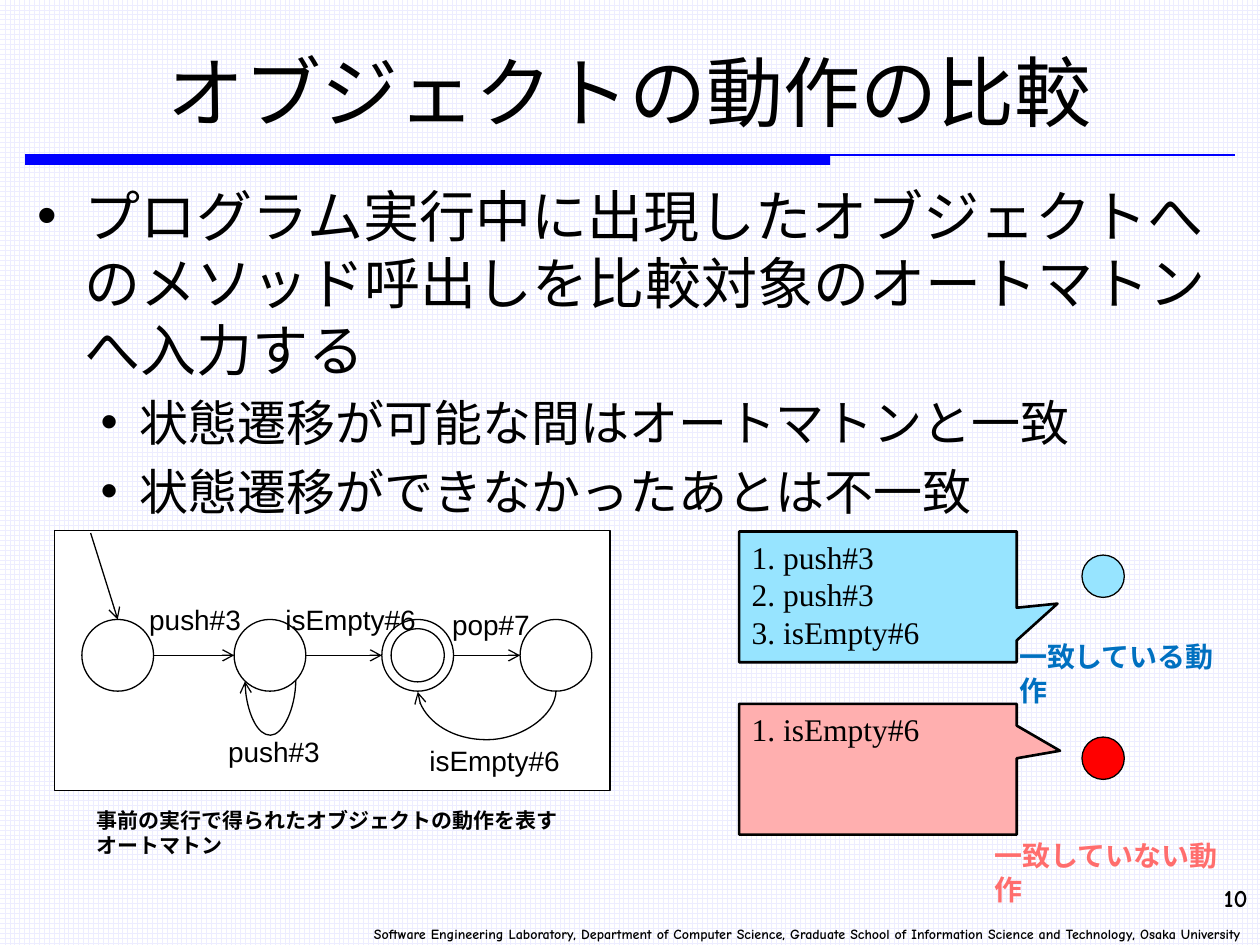
from pptx import Presentation
from pptx.dml.color import RGBColor
from pptx.enum.dml import MSO_PATTERN
from pptx.enum.shapes import MSO_CONNECTOR, MSO_SHAPE
from pptx.enum.text import MSO_ANCHOR, PP_ALIGN
from pptx.oxml.ns import qn
from pptx.util import Pt
from lxml import etree

GRID = MSO_PATTERN.LARGE_GRID
LINE, CURVE = MSO_CONNECTOR.STRAIGHT, MSO_CONNECTOR.CURVE
RECT, OVAL, CALL = MSO_SHAPE.RECTANGLE, MSO_SHAPE.OVAL, MSO_SHAPE.RECTANGULAR_CALLOUT
TOP, MID = MSO_ANCHOR.TOP, MSO_ANCHOR.MIDDLE
LEFT, RIGHT, CENTER = PP_ALIGN.LEFT, PP_ALIGN.RIGHT, PP_ALIGN.CENTER
BLACK, BLUE, SKY = "000000", "0000FF", "97E4FF"
STATE = 41
STATE_Y = 354
STATES = (46.8, 133.8, 218.2, 297.2)


def color(code):
    return RGBColor.from_string(code)


def write(para, text, size, font="Arial", ink=BLACK, bold=False):
    run = para.add_run()
    run.text = text
    run.font.size = Pt(size)
    run.font.name = font
    run.font.bold = bold
    run.font.color.rgb = color(ink)


def label(slide, box, text, size, wrap=False, align=LEFT, anchor=TOP, **style):
    frame = slide.shapes.add_textbox(*map(Pt, box)).text_frame
    frame.word_wrap = wrap
    frame.vertical_anchor = anchor
    para = frame.paragraphs[0]
    para.alignment = align
    write(para, text, size, **style)


def bullets(slide, box, items):
    """Lay out (text, size, margin, hang) items as a bulleted list."""
    frame = slide.shapes.add_textbox(*map(Pt, box)).text_frame
    frame.word_wrap = True
    for i, (text, size, margin, hang) in enumerate(items):
        para = frame.add_paragraph() if i else frame.paragraphs[0]
        props = para._p.get_or_add_pPr()
        props.set("marL", str(Pt(margin)))
        props.set("indent", str(-Pt(hang)))
        etree.SubElement(props, qn("a:buFont")).set("typeface", "Arial")
        etree.SubElement(props, qn("a:buChar")).set("char", "•")
        if i:
            para.space_before = Pt(size * 0.2)
        write(para, text, size)


def shape(slide, kind, box, fill=None, ink=BLACK, width=0.75):
    item = slide.shapes.add_shape(kind, *map(Pt, box))
    item.shadow.inherit = False
    if fill:
        item.fill.solid()
        item.fill.fore_color.rgb = color(fill)
    else:
        item.fill.background()
    if ink:
        item.line.color.rgb = color(ink)
        item.line.width = Pt(width)
    else:
        item.line.fill.background()
    return item


def callout(slide, box, fill, tip, steps):
    item = shape(slide, CALL, box, fill, width=1.5)
    item.adjustments[0], item.adjustments[1] = tip
    frame = item.text_frame
    frame.vertical_anchor = TOP
    for i, step in enumerate(steps):
        para = frame.add_paragraph() if i else frame.paragraphs[0]
        para.alignment = LEFT
        write(para, f"{i + 1}. {step}", 18, "Times New Roman")


def link(slide, start, end, ink=BLACK, kind=LINE, head=True):
    item = slide.shapes.add_connector(kind, *map(Pt, start + end))
    item.line.color.rgb = color(ink)
    item.line.width = Pt(0.75)
    if head:
        etree.SubElement(item.line._get_or_add_ln(), qn("a:tailEnd")).set("type", "arrow")
    etree.SubElement(item._element.spPr, qn("a:effectLst"))
    return item


def loop(slide, right, left, y, dip):
    """Draw a U-shaped arrow from right to left: a thin curve turned by 90 degrees."""
    thin, span = 0.72, right - left
    x, top = (right + left - thin) / 2, y - span / 2
    item = link(slide, (x, top), (x + thin, top + span), kind=CURVE)
    props = item._element.spPr
    props.find(qn("a:xfrm")).set("rot", "5400000")
    geom = props.find(qn("a:prstGeom"))
    guides = geom.find(qn("a:avLst"))
    if guides is None:
        guides = etree.SubElement(geom, qn("a:avLst"))
    guide = etree.SubElement(guides, qn("a:gd"))
    guide.set("name", "adj1")
    guide.set("fmla", f"val {round(dip / thin * 100000)}")


def frame(slide):
    fill = slide.background.fill
    fill.patterned()
    fill.pattern = GRID
    fill.fore_color.rgb = color("EDEDFF")
    fill.back_color.rgb = color("FFFFFF")
    shape(slide, RECT, (14.4, 88.5, 460, 5.8), BLUE, None)
    link(slide, (14.4, 88.5), (705.6, 88.5), BLUE, head=False)
    label(slide, (683.3, 501, 36.7, 20), "10", 14, align=RIGHT,
          font="Comic Neue", bold=True)
    label(slide, (136, 525.6, 581, 16.6),
          "Software Engineering Laboratory, Department of Computer Science, "
          "Graduate School of Information Science and Technology, Osaka University",
          8, align=RIGHT, font="Comic Neue", bold=True)


def machine(slide):
    shape(slide, RECT, (31, 303.3, 317.5, 148.3), "FFFFFF")
    for x in STATES:
        shape(slide, OVAL, (x, STATE_Y, STATE, STATE))
    shape(slide, OVAL, (STATES[2] + 5.3, STATE_Y + 5.3, 30.4, 30.4))
    mid = STATE_Y + STATE / 2
    link(slide, (51.8, 304.6), (STATES[0] + STATE / 2, STATE_Y))
    for a, b in zip(STATES, STATES[1:]):
        link(slide, (a + STATE, mid), (b, mid))
    loop(slide, 169, 140, 389, 32)
    loop(slide, STATES[3] + STATE / 2, STATES[2] + STATE / 2, STATE_Y + STATE, 28.5)
    for x, y, width, text in (
        (78.2, 340.6, 67.7, "push#3"),
        (156, 340.6, 90, "isEmpty#6"),
        (251.2, 343.8, 59, "pop#7"),
        (123.3, 416.4, 67.7, "push#3"),
        (238.3, 421.4, 90, "isEmpty#6"),
    ):
        label(slide, (x, y, width, 26.6), text, 16)
    label(slide, (48, 458, 297.4, 21.6),
          "事前の実行で得られたオブジェクトの動作を表すオートマトン",
          12, wrap=True, bold=True)


def traces(slide):
    callout(slide, (422.4, 303.7, 158.6, 74.7), SKY, (0.647, 0.052),
            ("push#3", "push#3", "isEmpty#6"))
    callout(slide, (422.4, 402.2, 158.6, 74.7), "FFAFAF", (0.656, -0.141),
            ("isEmpty#6",))
    label(slide, (575.3, 362.2, 129.6, 26.6), "一致している動作", 16,
          wrap=True, ink="0070C0", bold=True)
    label(slide, (561.3, 475.8, 145, 26.6), "一致していない動作", 16,
          wrap=True, ink="FF6D6D", bold=True)
    for y, fill in ((317.2, SKY), (421.2, "FF0000")):
        shape(slide, OVAL, (618.3, y, 24.2, 24.2), fill)


def main():
    deck = Presentation()
    deck.slide_width, deck.slide_height = Pt(720), Pt(540)
    slide = deck.slides.add_slide(deck.slide_layouts[6])
    frame(slide)
    label(slide, (14.4, 15, 691.7, 73.5), "オブジェクトの動作の比較", 44,
          wrap=True, align=CENTER, anchor=MID)
    bullets(slide, (14.4, 100, 691.7, 396.8), (
        ("プログラム実行中に出現したオブジェクトへのメソッド呼出しを比較対象のオートマトンへ入力する",
         32, 27, 27),
        ("状態遷移が可能な間はオートマトンと一致", 28, 58.5, 22.5),
        ("状態遷移ができなかったあとは不一致", 28, 58.5, 22.5),
    ))
    traces(slide)
    machine(slide)
    deck.save("out.pptx")


if __name__ == "__main__":
    main()
